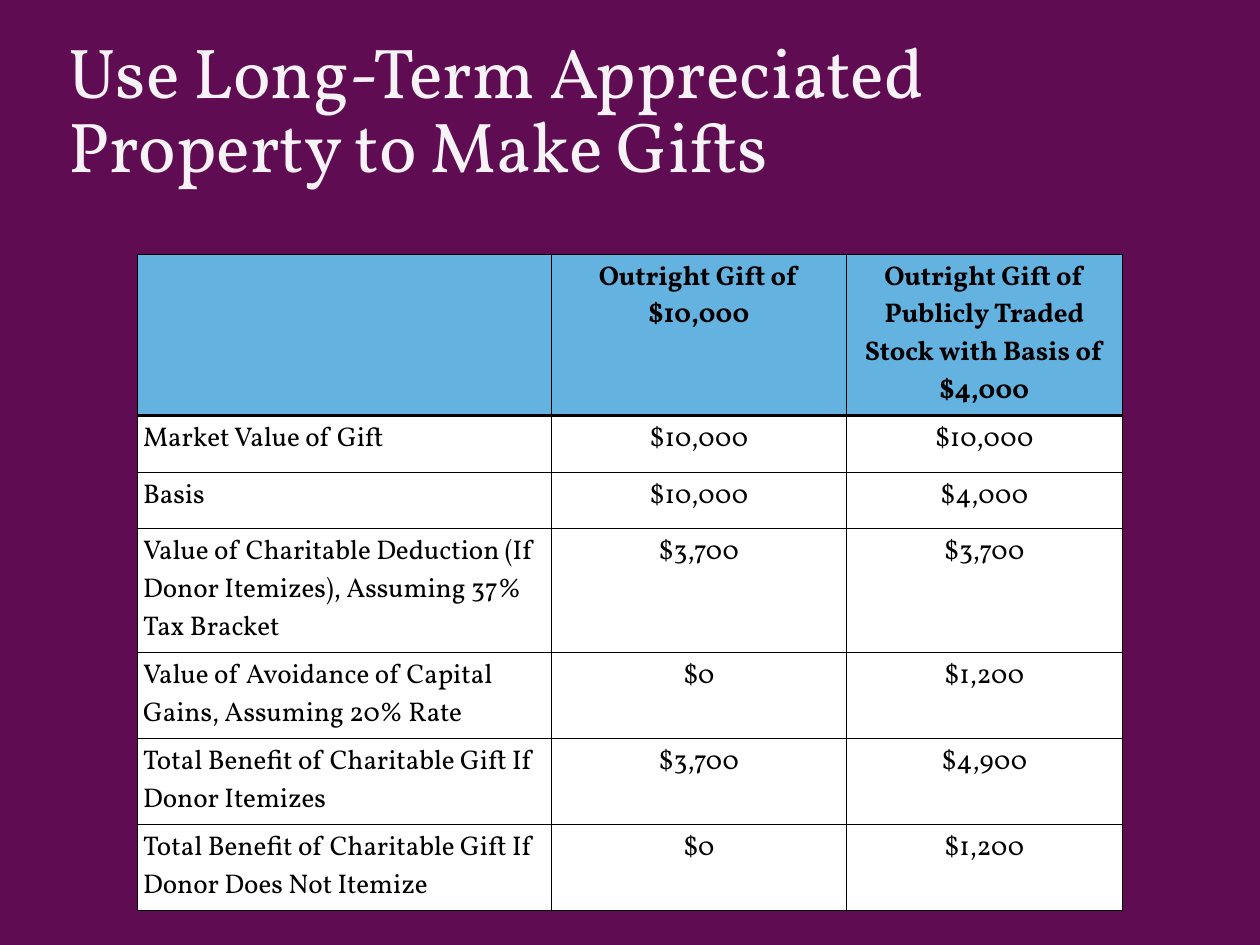
import lxml.etree
import pptx
import pptx.dml.color
import pptx.enum.text
import pptx.oxml
import pptx.oxml.ns
import pptx.util

PLUM = pptx.dml.color.RGBColor(0x60, 0x0C, 0x52)
SKY = pptx.dml.color.RGBColor(0x64, 0xB2, 0xDF)
WHITE = pptx.dml.color.RGBColor(0xFF, 0xFF, 0xFF)
BLACK = pptx.dml.color.RGBColor(0x00, 0x00, 0x00)

HEADLINE = "Use Long-Term Appreciated Property to Make Gifts"
GIFT_COMPARISON = [
    ("", "Outright Gift of $10,000",
     "Outright Gift of Publicly Traded Stock with Basis of $4,000"),
    ("Market Value of Gift", "$10,000", "$10,000"),
    ("Basis", "$10,000", "$4,000"),
    ("Value of Charitable Deduction (If Donor Itemizes), Assuming 37% Tax Bracket",
     "$3,700", "$3,700"),
    ("Value of Avoidance of Capital Gains, Assuming 20% Rate", "$0", "$1,200"),
    ("Total Benefit of Charitable Gift If Donor Itemizes", "$3,700", "$4,900"),
    ("Total Benefit of Charitable Gift If Donor Does Not Itemize", "$0", "$1,200"),
]
COLUMN_SPANS = (42, 30, 28)
ROW_SPANS = (10.2, 5.76, 5.76, 10.08, 7.5, 7.5, 7.5)


def set_all(target, values):
    for name, value in values.items():
        setattr(target, name, value)


class GiftSlide:
    """Builds the slide on a grid of 128 columns by 96 rows."""

    typeface = "Vollkorn"
    inset = pptx.util.Inches(0.06)
    thin, thick = 1, 3

    def __init__(self, deck):
        self.column = deck.slide_width / 128
        self.row = deck.slide_height / 96
        self.slide = deck.slides.add_slide(deck.slide_layouts[5])
        background = self.slide.background.fill
        background.solid()
        background.fore_color.rgb = PLUM

    def across(self, columns):
        return round(columns * self.column)

    def down(self, rows):
        return round(rows * self.row)

    def margins(self):
        return {f"margin_{side}": self.inset
                for side in ("left", "top", "right", "bottom")}

    def style_font(self, font, size, color, bold=False):
        set_all(font, {"name": self.typeface, "size": pptx.util.Pt(size), "bold": bold})
        font.color.rgb = color

    def title(self, text, left, top, width, height):
        headline = self.slide.shapes.title
        set_all(headline, {"left": self.across(left), "top": self.down(top),
                           "width": self.across(width), "height": self.down(height)})
        frame = headline.text_frame
        set_all(frame, {**self.margins(), "text": text, "word_wrap": True,
                        "auto_size": pptx.enum.text.MSO_AUTO_SIZE.NONE,
                        "vertical_anchor": pptx.enum.text.MSO_ANCHOR.MIDDLE})
        line = frame.paragraphs[0]
        set_all(line, {"alignment": pptx.enum.text.PP_ALIGN.LEFT, "line_spacing": 0.87})
        run = line.runs[0]
        self.style_font(run.font, 57.4, WHITE)
        ink = run.font.fill._xPr.find(".//" + pptx.oxml.ns.qn("a:srgbClr"))
        lxml.etree.SubElement(ink, pptx.oxml.ns.qn("a:alpha"), val="95000")

    def border(self, cell, widths):
        """Draw the cell's edges; widths are points for left, right, top, bottom."""
        properties = cell._tc.get_or_add_tcPr()
        for position, (edge, width) in enumerate(zip("LRTB", widths)):
            properties.insert(position, pptx.oxml.parse_xml(
                f'<a:ln{edge} {pptx.oxml.ns.nsdecls("a")} w="{pptx.util.Pt(width)}">'
                f'<a:solidFill><a:srgbClr val="{BLACK}"/></a:solidFill>'
                f'<a:prstDash val="solid"/></a:ln{edge}>'))

    def cell(self, cell, text, is_header, is_label, widths):
        set_all(cell, {**self.margins(), "text": text})
        cell.fill.solid()
        cell.fill.fore_color.rgb = SKY if is_header else WHITE
        line = cell.text_frame.paragraphs[0]
        align = pptx.enum.text.PP_ALIGN
        line.alignment = align.LEFT if is_label else align.CENTER
        self.style_font(line.font, 22, BLACK, is_header)
        for run in line.runs:
            self.style_font(run.font, 22, BLACK, is_header)
        self.border(cell, widths)

    def table(self, rows, left, top, column_spans, row_spans):
        table = self.slide.shapes.add_table(
            len(rows), len(column_spans), self.across(left), self.down(top),
            self.across(sum(column_spans)), self.down(sum(row_spans))).table
        table.horz_banding = False
        for column, span in zip(table.columns, column_spans):
            column.width = self.across(span)
        for index, (row, span, texts) in enumerate(zip(table.rows, row_spans, rows)):
            row.height = self.down(span)
            upper = self.thick if index == 1 else self.thin
            lower = self.thick if index == 0 else self.thin
            for position, text in enumerate(texts):
                self.cell(row.cells[position], text, index == 0, position == 0,
                          (self.thin, self.thin, upper, lower))


def main():
    deck = pptx.Presentation()
    set_all(deck, {"slide_width": pptx.util.Inches(14.22),
                   "slide_height": pptx.util.Inches(10.67)})
    gifts = GiftSlide(deck)
    gifts.title(HEADLINE, 6.4, 1.5, 115.2, 20)
    gifts.table(GIFT_COMPARISON, 14, 25.83, COLUMN_SPANS, ROW_SPANS)
    deck.save("out.pptx")


if __name__ == "__main__":
    main()
